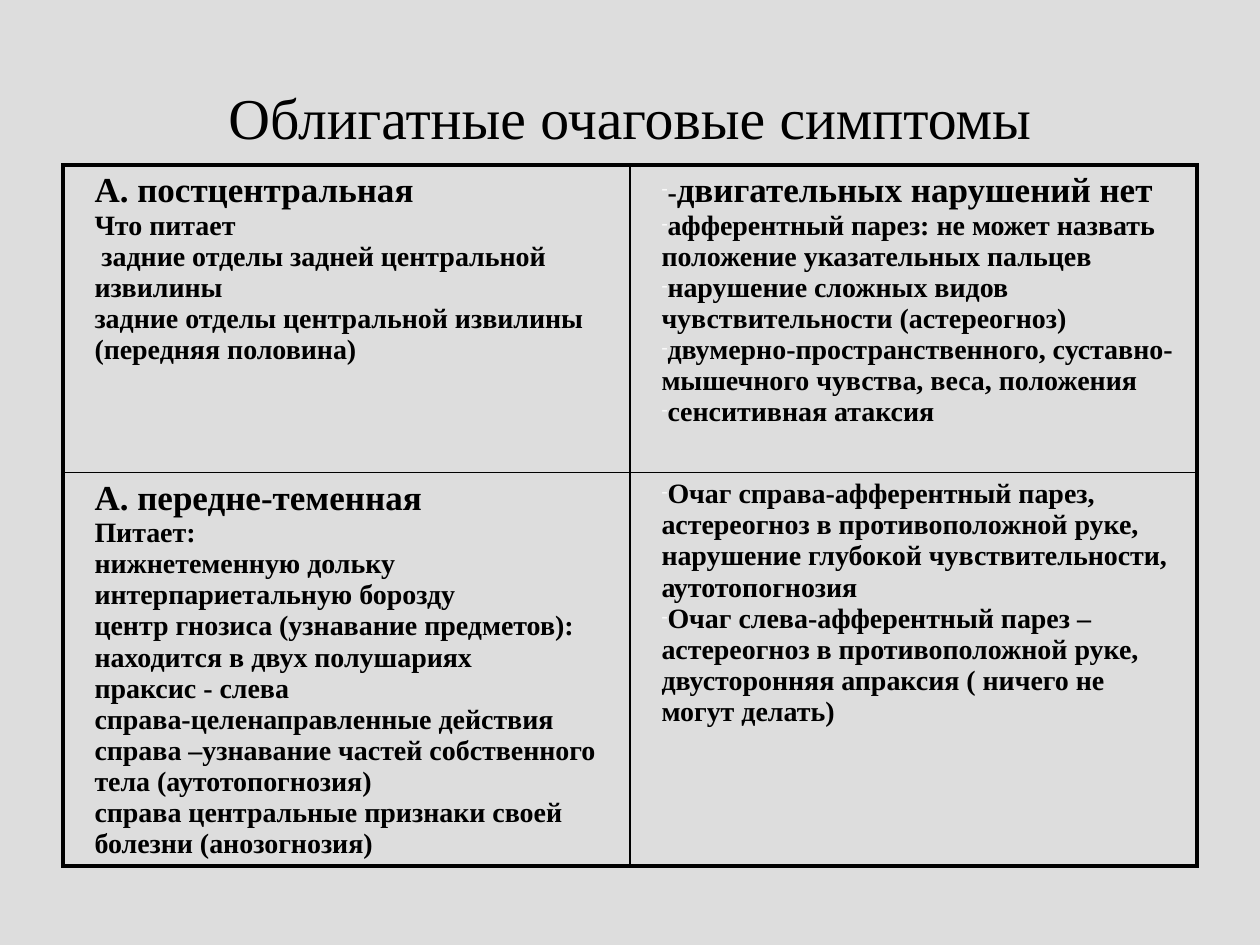
"""Builds a slide with a two-by-two table of obligatory focal symptoms."""
from dataclasses import dataclass

from lxml import etree
from pptx import Presentation
from pptx import util as u
from pptx.dml.color import RGBColor
from pptx.enum import text
from pptx.oxml import ns
from pptx.util import Inches


@dataclass(frozen=True)
class Theme:
    font: str = "Times New Roman"
    back: str = "DDDDDD"
    ink: str = "000000"
    bullet: str = "F9F9F9"
    title: int = 33
    heading: int = 20
    body: int = 16
    outer: float = 2.25
    inner: float = 1


def add_xml(parent, tag, **attrs):
    return etree.SubElement(parent, ns.qn(tag), attrs)


def style(r, size, bold):
    r.font.name, r.font.size, r.font.bold = theme.font, u.Pt(size), bold
    r.font.color.rgb = RGBColor.from_string(theme.ink)


theme = Theme()
heads = {"А. постцентральная", "двигательных нарушений нет", "А. передне-теменная"}
cells = [
    [
        [
            ["А. постцентральная"],
            ["Что питает"],
            [" задние отделы задней центральной извилины"],
            ["задние отделы центральной извилины (передняя половина)"],
        ],
        [
            ["-", "двигательных нарушений нет"],
            ["афферентный парез: не может назвать положение указательных пальцев"],
            ["нарушение сложных видов чувствительности (астереогноз)"],
            ["двумерно-пространственного, суставно-мышечного чувства, веса, положения"],
            ["сенситивная атаксия"],
        ],
    ],
    [
        [
            ["А. передне-теменная"],
            ["Питает:"],
            ["нижнетеменную дольку"],
            ["интерпариетальную борозду"],
            ["центр гнозиса (узнавание предметов): находится в двух полушариях"],
            ["праксис - слева"],
            ["справа-целенаправленные действия"],
            ["справа –узнавание частей собственного тела (аутотопогнозия)"],
            ["справа центральные признаки своей болезни (анозогнозия)"],
        ],
        [
            ["Очаг справа-афферентный парез, астереогноз в противоположной руке, "
             "нарушение глубокой чувствительности, аутотопогнозия"],
            ["Очаг слева-афферентный парез – астереогноз в противоположной руке, "
             "двусторонняя апраксия ( ничего не могут делать)"],
        ],
    ],
]

prs = Presentation()
prs.slide_width, prs.slide_height = Inches(10), Inches(7.5)
s = prs.slides.add_slide(prs.slide_layouts[5])
s.background.fill.solid()
s.background.fill.fore_color.rgb = RGBColor.from_string(theme.back)

title = s.shapes.title
title.left, title.top, title.width, title.height = map(Inches, (0.5, 0.3, 9, 1.25))
tf = title.text_frame
tf.text = "Облигатные очаговые симптомы"
tf.vertical_anchor = text.MSO_ANCHOR.MIDDLE
tf.paragraphs[0].alignment = text.PP_ALIGN.CENTER
style(tf.paragraphs[0].runs[0], theme.title, False)

heights = [2.44, 3.12]
table = s.shapes.add_table(2, 2, Inches(0.5), Inches(1.31), Inches(9), Inches(sum(heights))).table
table.first_row = table.horz_banding = False
for row, height in zip(table.rows, heights):
    row.height = Inches(height)

for i, row in enumerate(cells):
    for j, paragraphs in enumerate(row):
        cell = table.cell(i, j)
        tc_pr = cell._tc.get_or_add_tcPr()
        for side, is_outer in (("L", j == 0), ("R", j == 1), ("T", i == 0), ("B", i == 1)):
            width = u.Pt(theme.outer if is_outer else theme.inner)
            line = add_xml(tc_pr, f"a:ln{side}", w=str(width))
            add_xml(add_xml(line, "a:solidFill"), "a:srgbClr", val=theme.ink)
        cell.fill.background()

        tf = cell.text_frame
        for k, pieces in enumerate(paragraphs):
            p = tf.paragraphs[0] if k == 0 else tf.add_paragraph()
            p_pr = p._p.get_or_add_pPr()
            p_pr.set("marL", str(Inches(0.15)))
            p_pr.set("indent", "0")
            if j == 1:
                add_xml(add_xml(p_pr, "a:buClr"), "a:srgbClr", val=theme.bullet)
                add_xml(p_pr, "a:buSzPct", val="65000")
                add_xml(p_pr, "a:buChar", char="-")
            for piece in pieces:
                r = p.add_run()
                r.text = piece
                style(r, theme.heading if piece in heads else theme.body, True)

prs.save("out.pptx")
